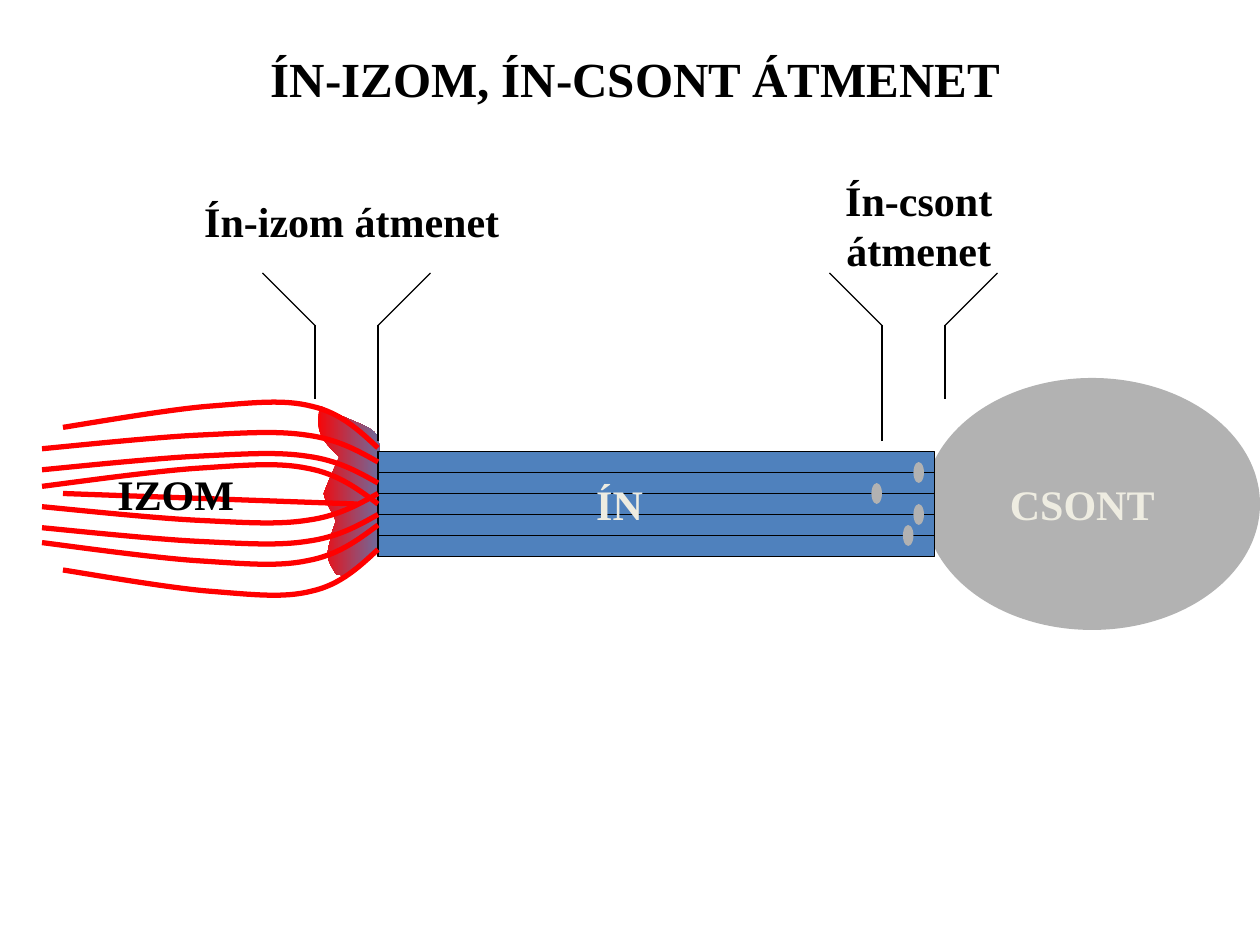
import lxml.etree
import pptx
import pptx.dml.color
import pptx.enum.shapes
import pptx.enum.text
import pptx.oxml.ns
import pptx.util

Pt = pptx.util.Pt
Shape = pptx.enum.shapes.MSO_SHAPE
Align = pptx.enum.text.PP_ALIGN
qn = pptx.oxml.ns.qn


class Theme:
    font = "Times New Roman"
    ink = "000000"
    pale = "EEECE1"
    red = "FF0000"
    blue = "4F81BD"
    bone = "B2B2B2"
    label = 24
    title = 28
    thin = 0.75
    thick = 3


def rgb(code):
    return pptx.dml.color.RGBColor.from_string(code)


class Board:
    def __init__(self, slide, theme):
        self.slide = slide
        self.theme = theme
        self.home = slide.shapes

    def group(self):
        """Send the next parts into a new group."""
        self.home = self.slide.shapes.add_group_shape().shapes

    def top(self):
        """Send the next parts straight to the slide."""
        self.home = self.slide.shapes

    def paint(self, item, fill=None, line=None, width=None):
        item.shadow.inherit = False
        if fill:
            item.fill.solid()
            item.fill.fore_color.rgb = rgb(fill)
        else:
            item.fill.background()
        if line:
            item.line.color.rgb = rgb(line)
            item.line.width = Pt(width)
        else:
            item.line.fill.background()

    def shape(self, kind, box, fill, line=None):
        item = self.home.add_shape(kind, *map(Pt, box))
        self.paint(item, fill, line, self.theme.thin)

    def line(self, start, end, color=None, width=None):
        item = self.home.add_connector(
            pptx.enum.shapes.MSO_CONNECTOR.STRAIGHT, *map(Pt, start + end))
        item.line.color.rgb = rgb(color or self.theme.ink)
        item.line.width = Pt(width or self.theme.thin)
        lxml.etree.SubElement(item._element.spPr, qn("a:effectLst"))

    def curve(self, dots, close=False):
        """Start point, then three points for each cubic segment."""
        dots = [(Pt(x), Pt(y)) for x, y in dots]
        pen = self.home.build_freeform(*dots[0])
        pen.add_line_segments(dots[1:], close=close)
        item = pen.convert_to_shape()
        # Join every three straight steps into one cubic segment
        steps = list(item._element.iter(qn("a:lnTo")))
        for first, *rest in zip(*[iter(steps)] * 3):
            first.tag = qn("a:cubicBezTo")
            for step in rest:
                first.append(step[0])
                step.getparent().remove(step)
        return item

    def strand(self, dots):
        self.paint(self.curve(dots), None, self.theme.red, self.theme.thick)

    def blend(self, dots, colors):
        item = self.curve(dots, close=True)
        self.paint(item)
        item.fill.gradient()
        item.fill.gradient_angle = 0
        for stop, color in zip(item.fill.gradient_stops, colors):
            stop.color.rgb = rgb(color)

    def text(self, words, box, color=None, size=None, align=Align.CENTER,
             glow=False):
        frame = self.home.add_textbox(*map(Pt, box)).text_frame
        frame.word_wrap = True
        frame.auto_size = pptx.enum.text.MSO_AUTO_SIZE.SHAPE_TO_FIT_TEXT
        para = frame.paragraphs[0]
        para.alignment = align
        run = para.add_run()
        run.text = words
        form = {"name": self.theme.font, "bold": True,
                "size": Pt(size or self.theme.label)}
        for key, value in form.items():
            setattr(run.font, key, value)
        run.font.color.rgb = rgb(color or self.theme.ink)
        if glow:
            self.shade(run)

    def shade(self, run):
        """Cast a pale shadow behind the letters."""
        effect = lxml.etree.Element(qn("a:effectLst"))
        cast = lxml.etree.SubElement(effect, qn("a:outerShdw"), {
            "dist": str(Pt(2.8)), "dir": "2700000", "algn": "tl"})
        lxml.etree.SubElement(cast, qn("a:srgbClr"), val=self.theme.pale)
        run._r.rPr.find(qn("a:solidFill")).addnext(effect)


# Share of a strand's width and height at each curve point
STRAND = [(0, 0), (.06, .36), (.12, .72), (.21, .85), (.3, 1), (.4, .92),
          (.54, .85), (.67, .78), (.92, .5), (1, .42)]
# Left end, right-end height and signed depth of each muscle strand
MUSCLE = [(36, 314, 28), (36, 256, -28), (24, 264, -18), (24, 276, -18),
          (24, 288, -24), (24, 282, 18), (24, 294, 18), (24, 300, 24)]
JOINT = [(183, 232), (224, 252), (217, 238), (215, 286), (215, 293),
         (219, 312), (212, 319), (212, 320), (210, 320), (207, 320),
         (206, 322), (204, 323), (202, 324), (201, 325), (201, 328),
         (199, 329), (197, 330), (194, 328), (192, 328), (187, 320),
         (186, 318), (189, 308), (189, 305), (192, 298), (192, 298),
         (190, 292), (186, 288), (185, 282), (188, 274), (191, 268),
         (194, 261), (183, 251), (180, 246), (183, 232)]
CELLS = [(516, 300), (522, 264), (498, 276), (522, 288)]


def main():
    deck = pptx.Presentation()
    deck.slide_width, deck.slide_height = Pt(720), Pt(540)
    theme = Theme()
    board = Board(deck.slides.add_slide(deck.slide_layouts[6]), theme)

    # Bone and muscle-tendon joint
    board.shape(Shape.OVAL, (528, 216, 192, 144), theme.bone)
    board.blend(JOINT, (theme.red, theme.blue))

    # Tendon with its fibres
    left, right, high, gap = 216, 534, 258, 12
    board.group()
    board.shape(Shape.RECTANGLE, (left, high, right - left, 5 * gap),
                theme.blue, theme.ink)
    for row in range(1, 5):
        y = high + row * gap
        board.line((left, y), (right, y))

    # Muscle strands
    board.group()
    for end, y, depth in MUSCLE:
        board.strand([(left - (left - end) * u, y + depth * v)
                      for u, v in STRAND])
    board.line((204, 288), (36, 282), theme.red, theme.thick)

    # Names of the tissues
    board.top()
    board.text("IZOM", (60, 264, 120, 36), align=Align.LEFT)
    board.text("ÍN", (294, 270, 120, 36), theme.pale)
    board.text("CSONT", (570, 270, 120, 36), theme.pale, align=Align.LEFT)

    # Cells near the bone
    board.group()
    for x, y in CELLS:
        board.shape(Shape.OVAL, (x, y, 6, 12), theme.bone)

    # Brackets: the longer leg stands on the tendon side
    for outer, inner in ((180, 216), (540, 504)):
        side = 1 if inner > outer else -1
        board.group()
        for x, foot, lean in ((outer, 228, -side), (inner, 252, side)):
            board.line((x, foot), (x, 186))
            board.line((x, 186), (x + 30 * lean, 156))

    # Headings
    board.top()
    board.text("Ín-izom átmenet", (108, 108, 186, 36), glow=True)
    board.text("Ín-csont átmenet", (432, 96, 186, 65.5), glow=True)
    board.text("ÍN-IZOM, ÍN-CSONT ÁTMENET", (144, 24, 438, 41),
               size=theme.title)

    deck.save("out.pptx")


if __name__ == "__main__":
    main()
